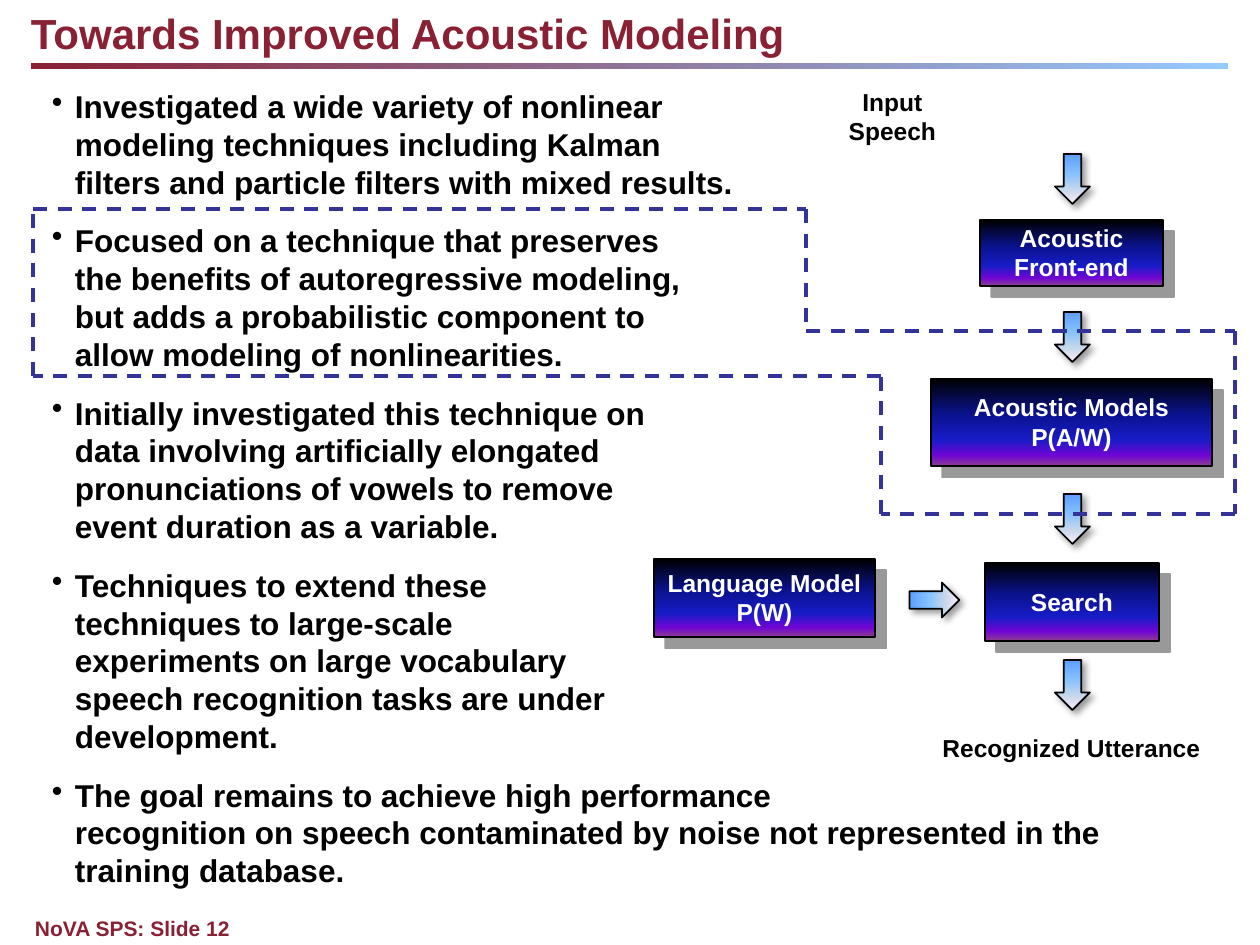
from itertools import pairwise

from lxml.etree import SubElement
from pptx import Presentation
from pptx.dml.color import RGBColor
from pptx.enum.dml import MSO_LINE
from pptx.enum.shapes import MSO_CONNECTOR, MSO_SHAPE
from pptx.enum.text import PP_ALIGN
from pptx.oxml.ns import qn
from pptx.util import Emu, Pt

PX = 914400 / 126
FONT = "Arial"
COLORS = {
    "maroon": "892034",
    "sky": "95CAFF",
    "black": "000000",
    "white": "FFFFFF",
    "dash": "333399",
}
RULE_STOPS = [(0, COLORS["maroon"]), (100, COLORS["sky"])]
STAGE_STOPS = [(0, "000000"), (40, "0A128C"), (70, "181CC7"), (88, "7005D4"), (100, "8C3D91")]
ARROW_STOPS = [(0, "5E9EFF"), (40, "85C2FF"), (70, "C4D6EB"), (100, "FFEBFA")]
LINE_HEIGHT = 30

BULLETS = [
    "Investigated a wide variety of nonlinear\nmodeling techniques including Kalman\n"
    "filters and particle filters with mixed results.",
    "Focused on a technique that preserves\nthe benefits of autoregressive modeling,\n"
    "but adds a probabilistic component to\nallow modeling of nonlinearities.",
    "Initially investigated this technique on\ndata involving artificially elongated\n"
    "pronunciations of vowels to remove\nevent duration as a variable.",
    "Techniques to extend these\ntechniques to large-scale\nexperiments on large vocabulary\n"
    "speech recognition tasks are under\ndevelopment.",
    "The goal remains to achieve high performance\n"
    "recognition on speech contaminated by noise not represented in the training database.",
]
STAGES = [
    ("Acoustic\nFront-end", 980, 220, 183, 66),
    ("Acoustic Models\nP(A/W)", 931, 379, 281, 87),
    ("Language Model\nP(W)", 654, 559, 221, 78),
    ("Search", 985, 563, 174, 78),
]
ARROWS = [(1055, 154, 0), (1055, 312, 0), (1055, 494, 0), (917, 575, 270), (1055, 660, 0)]
FOCUS_CORNERS = [(33, 209), (806, 209), (806, 331), (1235, 331),
                 (1235, 514), (881, 514), (881, 376), (33, 376)]


def px(*lengths):
    return [Emu(round(length * PX)) for length in lengths]


def rgb(name):
    return RGBColor.from_string(COLORS[name])


def add_color(parent, hex_color):
    return SubElement(parent, qn("a:srgbClr"), val=hex_color)


def add_gradient_shape(slide, kind, box, stops, angle, shadow=None):
    shape = slide.shapes.add_shape(kind, *px(*box))
    shape.shadow.inherit = False
    shape.fill.gradient()
    shape.fill.gradient_angle = angle
    properties = shape.element.spPr
    stop_list = properties.find(qn("a:gradFill")).find(qn("a:gsLst"))
    for default_stop in list(stop_list):
        stop_list.remove(default_stop)
    for position, hex_color in stops:
        add_color(SubElement(stop_list, qn("a:gs"), pos=str(position * 1000)), hex_color)
    if shadow is None:
        shape.line.fill.background()
        return shape

    # Outlined shapes cast a shadow to the lower right
    shape.line.color.rgb = rgb("black")
    shape.line.width = Pt(1)
    blur, distance = shadow
    outer = SubElement(properties.find(qn("a:effectLst")), qn("a:outerShdw"),
                       blurRad=str(Pt(blur)), dist=str(Pt(distance)),
                       dir="2700000", algn="tl", rotWithShape="0")
    SubElement(add_color(outer, COLORS["black"]), qn("a:alpha"), val="40000")
    return shape


def add_lines(paragraph, text, size, color):
    for number, line in enumerate(text.split("\n")):
        if number:
            paragraph.add_line_break()
        run = paragraph.add_run()
        run.text = line
        run.font.name = FONT
        run.font.size = Pt(size)
        run.font.bold = True
        run.font.color.rgb = rgb(color)


def add_text_frame(slide, box):
    frame = slide.shapes.add_textbox(*px(*box)).text_frame
    frame.word_wrap = True
    frame.margin_left = frame.margin_top = frame.margin_right = frame.margin_bottom = 0
    return frame


def add_label(slide, text, box, size=14, color="black", align=PP_ALIGN.CENTER):
    paragraph = add_text_frame(slide, box).paragraphs[0]
    paragraph.alignment = align
    add_lines(paragraph, text, size, color)


def add_bullets(slide, bullets, box):
    frame = add_text_frame(slide, box)
    indent = px(23)[0]
    for number, text in enumerate(bullets):
        paragraph = frame.add_paragraph() if number else frame.paragraphs[0]
        properties = paragraph._p.get_or_add_pPr()
        properties.set("marL", str(indent))
        properties.set("indent", str(-indent))
        SubElement(properties, qn("a:buChar"), char="•")
        paragraph.space_after = Pt(12)
        add_lines(paragraph, text, 18, "black")


def add_stage(slide, text, left, top, width, height):
    add_gradient_shape(slide, MSO_SHAPE.RECTANGLE, (left, top, width, height),
                       STAGE_STOPS, 270, shadow=(0, 9))
    label_height = LINE_HEIGHT * len(text.split("\n"))
    label_top = top + (height - label_height) / 2
    add_label(slide, text, (left, label_top, width, label_height), color="white")


def add_flow_arrow(slide, left, top, rotation):
    arrow = add_gradient_shape(slide, MSO_SHAPE.DOWN_ARROW, (left, top, 35, 50),
                               ARROW_STOPS, 270, shadow=(4, 3))
    arrow.rotation = rotation


def add_dashed_line(slide, start, end):
    line = slide.shapes.add_connector(MSO_CONNECTOR.STRAIGHT, *px(*start, *end))
    line.line.color.rgb = rgb("dash")
    line.line.width = Pt(2)
    line.line.dash_style = MSO_LINE.DASH
    SubElement(line.element.spPr, qn("a:effectLst"))


def main():
    presentation = Presentation()
    presentation.slide_width, presentation.slide_height = px(1260, 945)
    slide = presentation.slides.add_slide(presentation.slide_layouts[6])

    # Title rule and footer
    add_gradient_shape(slide, MSO_SHAPE.RECTANGLE, (31, 63, 1197, 6), RULE_STOPS, 0)
    add_label(slide, "NoVA SPS: Slide 12", (35, 916, 1124, 25), 12, "maroon", PP_ALIGN.LEFT)

    # Recognition pipeline
    for stage in STAGES:
        add_stage(slide, *stage)
    add_label(slide, "Input\nSpeech", (803, 87, 179, 59))
    for arrow in ARROWS:
        add_flow_arrow(slide, *arrow)
    add_label(slide, "Recognized Utterance", (897, 733, 349, LINE_HEIGHT))

    # Title and findings
    add_label(slide, "Towards Improved Acoustic Modeling", (31, 8, 1194, 50),
              24, "maroon", PP_ALIGN.LEFT)
    add_bullets(slide, BULLETS, (52, 87, 1169, 716))

    # Dashed outline joining the focus bullet to the acoustic models
    for start, end in pairwise(FOCUS_CORNERS + FOCUS_CORNERS[:1]):
        add_dashed_line(slide, start, end)

    presentation.save("out.pptx")


if __name__ == "__main__":
    main()
